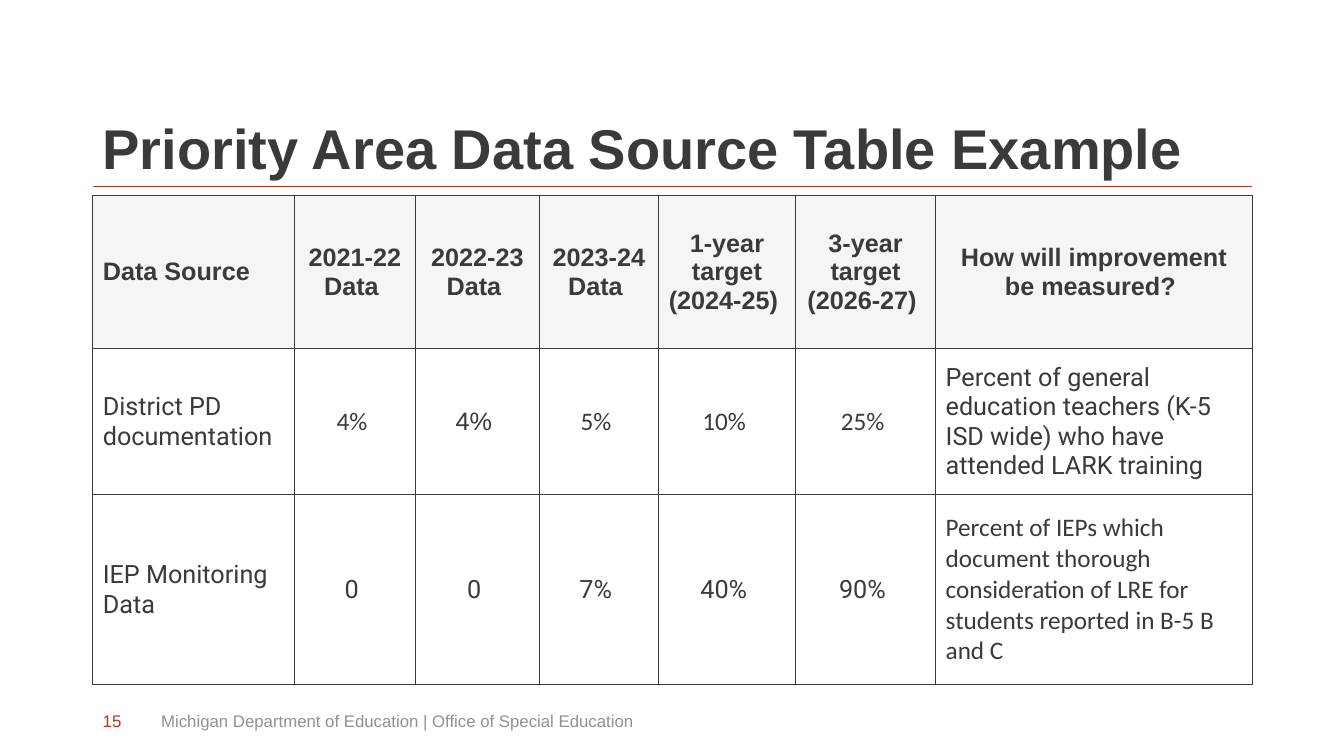
from dataclasses import dataclass

from lxml.etree import SubElement
from pptx import Presentation
from pptx.dml.color import RGBColor
from pptx.enum.shapes import MSO_CONNECTOR
from pptx.enum.text import MSO_ANCHOR, PP_ALIGN
from pptx.oxml.ns import qn
from pptx.slide import Slide
from pptx.table import _Cell
from pptx.text.text import TextFrame
from pptx.util import Inches, Pt

INK = RGBColor(0x3A, 0x3A, 0x3A)
ACCENT = RGBColor(0xC3, 0x32, 0x1B)
MUTED = RGBColor(0x91, 0x91, 0x91)
HEADER_FILL = RGBColor(0xF5, 0xF5, 0xF5)

LEFT, WIDTH = 0.92, 11.5
RULE_Y, TABLE_TOP = 1.85, 1.94
FOOTER_TOP, FOOTER_HEIGHT = 6.95, 0.4
COLUMN_WIDTHS = (2, 1.2, 1.23, 1.18, 1.36, 1.39, 3.14)
ROW_HEIGHTS = (1.52, 1.45, 1.88)
NBSP = " "  # no-break space that closes every table entry


@dataclass(frozen=True)
class Style:
    size: float
    color: RGBColor = INK
    font: str = "Arial"
    bold: bool = False
    line_spacing: float = 1.0


@dataclass(frozen=True)
class Label:
    text: str
    left: float
    top: float
    width: float
    height: float
    style: Style
    anchor: MSO_ANCHOR = MSO_ANCHOR.MIDDLE


@dataclass(frozen=True)
class Entry:
    text: str
    font: str = "Roboto"


LABELS = (
    Label("Priority Area Data Source Table Example", LEFT, 0.4, WIDTH, 1.45,
          Style(40, bold=True, line_spacing=0.9), MSO_ANCHOR.BOTTOM),
    Label("15", LEFT, FOOTER_TOP, 0.45, FOOTER_HEIGHT, Style(12, ACCENT)),
    Label("Michigan Department of Education | Office of Special Education",
          1.5, FOOTER_TOP, 8.39, FOOTER_HEIGHT, Style(12, MUTED)),
)

HEADINGS = ("Data Source", "2021-22 Data", "2022-23 Data", "2023-24\nData",
            "1-year target (2024-25)", "3-year target (2026-27)",
            "How will improvement be measured?")

MEASURES = (
    (Entry("District PD documentation"), Entry("4%", "Calibri"),
     Entry("4%", "Arial"), Entry("5%", "Calibri"), Entry("10%", "Calibri"),
     Entry("25%", "Calibri"),
     Entry("Percent of general education teachers (K-5 ISD wide) "
           "who have attended LARK training")),
    (Entry("IEP Monitoring Data"), Entry("0"), Entry("0"), Entry("7%"),
     Entry("40%"), Entry("90%"),
     Entry("Percent of IEPs which document thorough consideration of LRE "
           "for students reported in B-5 B and C", "Calibri")),
)


def write(frame: TextFrame, text: str, style: Style,
          align: PP_ALIGN = PP_ALIGN.LEFT) -> None:
    for index, line in enumerate(text.split("\n")):
        paragraph = frame.add_paragraph() if index else frame.paragraphs[0]
        paragraph.alignment = align
        paragraph.line_spacing = style.line_spacing
        run = paragraph.add_run()
        run.text = line
        run.font.size = Pt(style.size)
        run.font.name = style.font
        run.font.bold = style.bold
        run.font.color.rgb = style.color


def draw_label(slide: Slide, label: Label) -> None:
    box = slide.shapes.add_textbox(Inches(label.left), Inches(label.top),
                                   Inches(label.width), Inches(label.height))
    box.text_frame.word_wrap = True
    box.text_frame.vertical_anchor = label.anchor
    write(box.text_frame, label.text, label.style)


def draw_rule(slide: Slide) -> None:
    rule = slide.shapes.add_connector(
        MSO_CONNECTOR.STRAIGHT, Inches(LEFT), Inches(RULE_Y),
        Inches(LEFT + WIDTH), Inches(RULE_Y))
    rule.line.color.rgb = ACCENT
    rule.line.width = Pt(0.5)
    SubElement(rule._element.spPr, qn("a:effectLst"))


def add_borders(cell: _Cell) -> None:
    properties = cell._tc.get_or_add_tcPr()
    for side in ("a:lnL", "a:lnR", "a:lnT", "a:lnB"):
        border = SubElement(properties, qn(side), w=str(Pt(0.75)))
        fill = SubElement(border, qn("a:solidFill"))
        SubElement(fill, qn("a:srgbClr"), val=str(INK))


def draw_table(slide: Slide) -> None:
    rows = (tuple(Entry(heading, "Arial") for heading in HEADINGS), *MEASURES)
    table = slide.shapes.add_table(
        len(rows), len(HEADINGS), Inches(LEFT), Inches(TABLE_TOP),
        Inches(WIDTH), Inches(sum(ROW_HEIGHTS))).table
    table.horz_banding = False
    for column, width in zip(table.columns, COLUMN_WIDTHS):
        column.width = Inches(width)
    for row, height in zip(table.rows, ROW_HEIGHTS):
        row.height = Inches(height)

    last_column = len(HEADINGS) - 1
    for row_index, entries in enumerate(rows):
        is_header = row_index == 0
        for column_index, entry in enumerate(entries):
            cell = table.cell(row_index, column_index)
            cell.vertical_anchor = MSO_ANCHOR.MIDDLE
            add_borders(cell)
            if is_header:
                cell.fill.solid()
                cell.fill.fore_color.rgb = HEADER_FILL
            else:
                cell.fill.background()
            is_left = column_index == 0 or (
                column_index == last_column and not is_header)
            write(cell.text_frame, entry.text + NBSP,
                  Style(18, font=entry.font, bold=is_header),
                  PP_ALIGN.LEFT if is_left else PP_ALIGN.CENTER)


def main() -> None:
    presentation = Presentation()
    presentation.slide_width = Inches(13.33)
    presentation.slide_height = Inches(7.5)
    slide = presentation.slides.add_slide(presentation.slide_layouts[6])

    # Rule under the title
    draw_rule(slide)
    # Data source table
    draw_table(slide)
    # Title and footer
    for label in LABELS:
        draw_label(slide, label)

    presentation.save("out.pptx")


if __name__ == "__main__":
    main()
